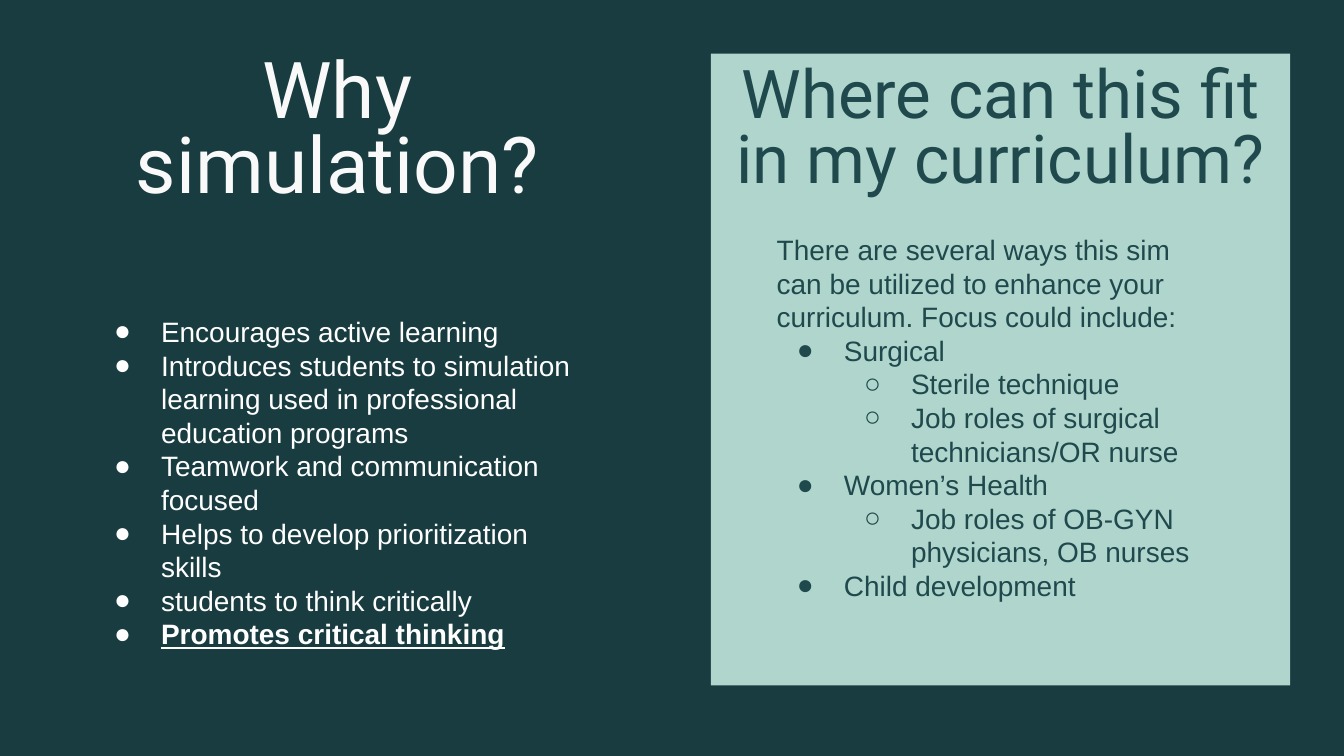
from dataclasses import dataclass

from pptx import Presentation
from pptx.dml.color import RGBColor
from pptx.enum.shapes import MSO_SHAPE
from pptx.enum.text import MSO_ANCHOR, PP_ALIGN
from pptx.oxml.ns import qn
from pptx.util import Pt
from lxml import etree

RECTANGLE = MSO_SHAPE.RECTANGLE
TOP, BOTTOM = MSO_ANCHOR.TOP, MSO_ANCHOR.BOTTOM
LEFT, CENTER = PP_ALIGN.LEFT, PP_ALIGN.CENTER


@dataclass(frozen=True)
class Theme:
    background: str = "183C40"
    panel: str = "B0D5CD"
    dark_text: str = "20494D"
    light_text: str = "FFFFFF"
    title_text: str = "F9F9F9"
    heading_font: str = "Roboto"
    body_font: str = "Arial"
    title_size: int = 42
    heading_size: int = 36
    body_size: int = 15
    body_leading: int = 18
    heading_leading: float = 0.8
    inset: float = 7.2
    level_indent: int = 36
    hanging: float = 25.2


class SlideBuilder:
    def __init__(self, deck, theme):
        self.theme = theme
        self.page = deck.slides.add_slide(deck.slide_layouts[6])
        fill = self.page.background.fill
        fill.solid()
        fill.fore_color.rgb = RGBColor.from_string(theme.background)

    def set_values(self, target, values):
        for name, value in values.items():
            setattr(target, name, value)

    def text_box(self, place):
        return self.page.shapes.add_textbox(*map(Pt, place))

    def panel(self, place):
        box = self.page.shapes.add_shape(RECTANGLE, *map(Pt, place))
        box.shadow.inherit = False
        box.fill.solid()
        box.fill.fore_color.rgb = RGBColor.from_string(self.theme.panel)
        box.line.fill.background()
        return box

    def frame(self, box, anchor=TOP, bottom=None):
        inset = Pt(self.theme.inset)
        self.set_values(box.text_frame, {
            "word_wrap": True,
            "vertical_anchor": anchor,
            "margin_left": inset,
            "margin_right": inset,
            "margin_top": inset,
            "margin_bottom": inset if bottom is None else Pt(bottom),
        })
        return box.text_frame

    def span(self, para, text, color, values):
        span = para.add_run()
        span.text = text
        self.set_values(span.font, values)
        span.font.color.rgb = RGBColor.from_string(color)

    def heading(self, box, text, size, color):
        para = self.frame(box).paragraphs[0]
        self.set_values(para, {
            "alignment": CENTER,
            "line_spacing": self.theme.heading_leading,
        })
        self.span(para, text, color,
                  {"name": self.theme.heading_font, "size": Pt(size)})

    def bullet(self, para, level, color):
        properties = para._p.get_or_add_pPr()
        properties.set("marL", str(Pt(level * self.theme.level_indent)))
        properties.set("indent", str(-Pt(self.theme.hanging)))
        bullet_color = etree.SubElement(properties, qn("a:buClr"))
        etree.SubElement(bullet_color, qn("a:srgbClr"), val=color)
        etree.SubElement(properties, qn("a:buFont"),
                         typeface=self.theme.body_font)
        etree.SubElement(properties, qn("a:buChar"),
                         char="●" if level == 1 else "○")

    def body(self, box, items, color, anchor=TOP, bottom=None):
        frame = self.frame(box, anchor, bottom)
        for index, (level, text, emphasis) in enumerate(items):
            para = frame.add_paragraph() if index else frame.paragraphs[0]
            self.set_values(para, {
                "alignment": LEFT,
                "level": max(level - 1, 0),
                "line_spacing": Pt(self.theme.body_leading),
            })
            if level:
                self.bullet(para, level, color)
            self.span(para, text, color, {
                "name": self.theme.body_font,
                "size": Pt(self.theme.body_size),
                "bold": emphasis,
                "underline": emphasis,
            })


REASONS = [
    (1, "Encourages active learning", False),
    (1, "Introduces students to simulation learning used in professional "
        "education programs", False),
    (1, "Teamwork and communication focused", False),
    (1, "Helps to develop prioritization skills", False),
    (1, "students to think critically", False),
    (1, "Promotes critical thinking", True),
]

USES = [
    (0, "There are several ways this sim can be utilized to enhance your "
        "curriculum. Focus could include:", False),
    (1, "Surgical", False),
    (2, "Sterile technique", False),
    (2, "Job roles of surgical technicians/OR nurse", False),
    (1, "Women’s Health", False),
    (2, "Job roles of OB-GYN physicians, OB nurses", False),
    (1, "Child development", False),
]


def main():
    deck = Presentation()
    deck.slide_width, deck.slide_height = Pt(720), Pt(405)
    theme = Theme()
    slide = SlideBuilder(deck, theme)

    slide.heading(slide.text_box((28.8, 23.8, 303.8, 46)),
                  "Why simulation?", theme.title_size, theme.title_text)
    slide.body(slide.text_box((43.2, 262.8, 275, 104.4)),
               REASONS, theme.light_text, BOTTOM, bottom=18.7)
    slide.heading(slide.panel((380.9, 28.8, 310.3, 338.4)),
                  "Where can this fit in my curriculum?",
                  theme.heading_size, theme.dark_text)
    slide.body(slide.panel((409, 117.4, 253.4, 213.8)),
               USES, theme.dark_text)

    deck.save("out.pptx")


if __name__ == "__main__":
    main()
